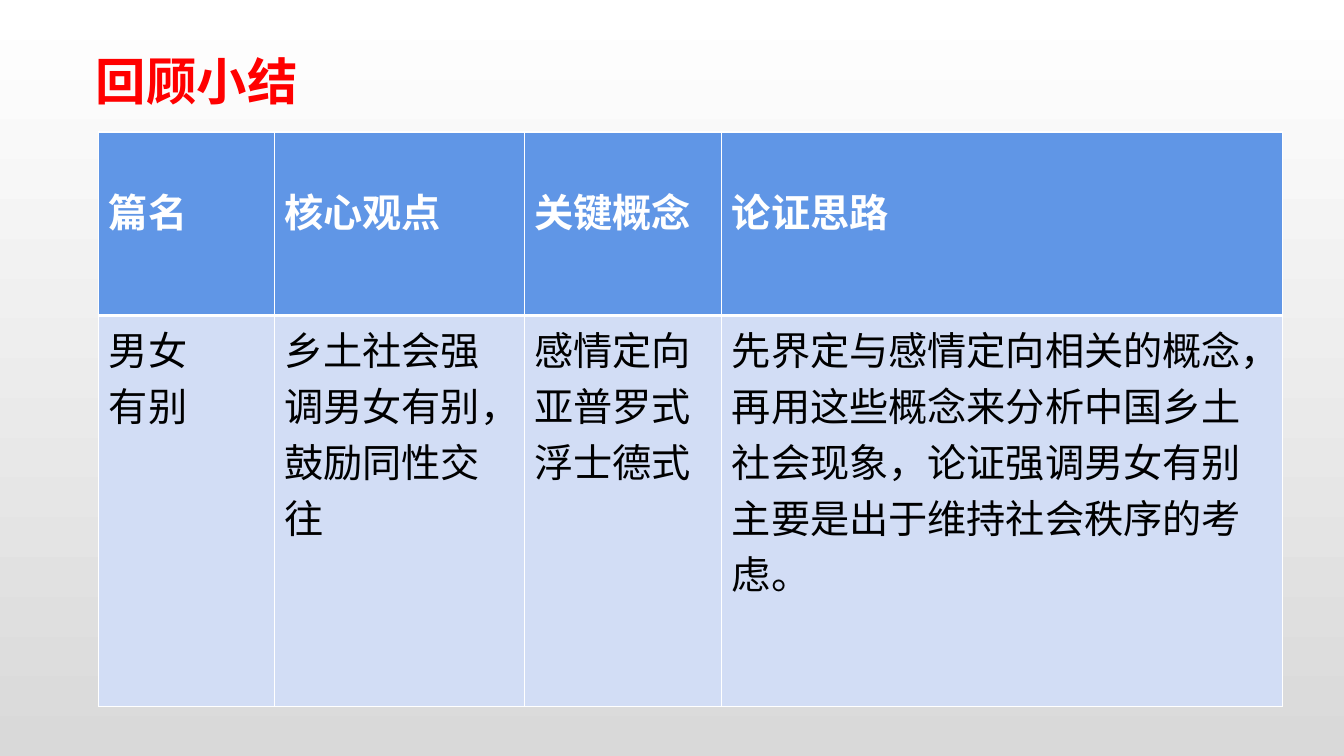
"""Build a review slide with a title and a summary table."""
from dataclasses import dataclass

from lxml.etree import SubElement
from pptx import Presentation
from pptx.dml.color import RGBColor
from pptx.enum.text import MSO_ANCHOR, PP_ALIGN
from pptx.oxml.ns import qn
from pptx.util import Inches, Pt

TITLE = "回顾小结"
HEADER = ["篇名", "核心观点", "关键概念", "论证思路"]
BODY = [
    "男女\n有别",
    "乡土社会强调男女有别，鼓励同性交往",
    "感情定向\n亚普罗式\n浮士德式",
    "先界定与感情定向相关的概念，再用这些概念来分析中国乡土社会现象，论证强调男女有别\n主要是出于维持社会秩序的考虑。",
]
COLS = [1.74, 2.48, 1.96, 5.56]
ROWS = [1.82, 3.88]
TABLE_AT = (0.98, 1.31)
TITLE_BOX = (0.85, 0.44, 2.23, 0.71)


@dataclass(frozen=True)
class Theme:
    title: str = "FF0000"
    header_text: str = "FFFFFF"
    body_text: str = "000000"
    header_fill: str = "6096E6"
    body_fill: str = "D2DDF5"
    border: str = "FFFFFF"
    background: tuple = ("FFFFFF", "D9D9D9")
    title_font: str = "Noto Sans CJK SC"
    table_font: str = "Arial"
    title_size: int = 36
    table_size: int = 28
    leading: int = 40
    thin: int = 1
    thick: int = 3


T = Theme()


def set_font(p, name, size, color, bold):
    p.font.name, p.font.size, p.font.bold = name, Pt(size), bold
    p.font.color.rgb = RGBColor.from_string(color)


def set_borders(cell, **widths):
    tc_pr = cell._tc.get_or_add_tcPr()
    for side in "LRTB":
        ln = SubElement(tc_pr, qn(f"a:ln{side}"), w=str(Pt(widths.get(side, T.thin))))
        SubElement(SubElement(ln, qn("a:solidFill")), qn("a:srgbClr"), val=T.border)


def fill_cell(cell, text, is_header):
    set_borders(cell, **{"B" if is_header else "T": T.thick})
    cell.fill.solid()
    cell.fill.fore_color.rgb = RGBColor.from_string(T.header_fill if is_header else T.body_fill)
    cell.text = text
    if is_header:
        cell.margin_top = Inches(0.5)
    for p in cell.text_frame.paragraphs:
        set_font(p, T.table_font, T.table_size, T.header_text if is_header else T.body_text, is_header)
        if not is_header:
            p.line_spacing = Pt(T.leading)


def add_title(s):
    sp = s.shapes.title
    sp.left, sp.top, sp.width, sp.height = map(Inches, TITLE_BOX)
    tf = sp.text_frame
    tf.text, tf.word_wrap, tf.vertical_anchor = TITLE, False, MSO_ANCHOR.MIDDLE
    p = tf.paragraphs[0]
    p.alignment = PP_ALIGN.LEFT
    set_font(p, T.title_font, T.title_size, T.title, True)


def add_summary(s):
    size = (sum(COLS), sum(ROWS))
    table = s.shapes.add_table(len(ROWS), len(COLS), *map(Inches, TABLE_AT + size)).table
    table.horz_banding = False
    for col, width in zip(table.columns, COLS):
        col.width = Inches(width)
    for i, (row, height, texts) in enumerate(zip(table.rows, ROWS, (HEADER, BODY))):
        row.height = Inches(height)
        for cell, text in zip(row.cells, texts):
            fill_cell(cell, text, i == 0)


def main():
    prs = Presentation()
    prs.slide_width, prs.slide_height = Inches(13.33), Inches(7.5)
    s = prs.slides.add_slide(prs.slide_layouts[5])
    fill = s.background.fill
    fill.gradient()
    fill.gradient_angle = 270
    for stop, color in zip(fill.gradient_stops, T.background):
        stop.color.rgb = RGBColor.from_string(color)
    add_summary(s)
    add_title(s)
    prs.save("out.pptx")


if __name__ == "__main__":
    main()
